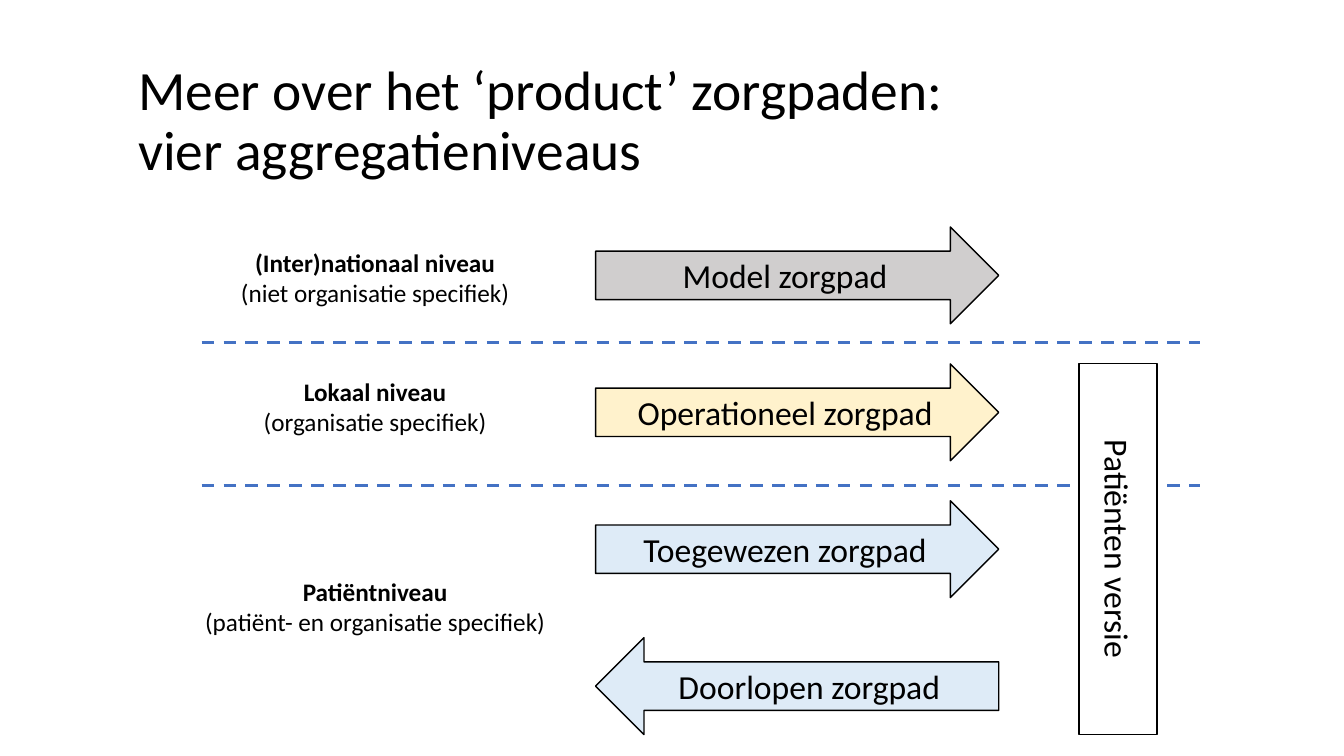
import pptx
import pptx.util
import pptx.dml.color
import pptx.enum.dml
import pptx.enum.shapes
import pptx.enum.text
import pptx.oxml.ns
import lxml.etree

Cm = pptx.util.Cm
Pt = pptx.util.Pt
RGBColor = pptx.dml.color.RGBColor
MSO_SHAPE = pptx.enum.shapes.MSO_SHAPE
PP_ALIGN = pptx.enum.text.PP_ALIGN
MSO_ANCHOR = pptx.enum.text.MSO_ANCHOR

BLACK = RGBColor(0x00, 0x00, 0x00)
WHITE = RGBColor(0xFF, 0xFF, 0xFF)
GREY = RGBColor(0xD0, 0xCE, 0xCE)
YELLOW = RGBColor(0xFF, 0xF2, 0xCC)
LIGHT_BLUE = RGBColor(0xDE, 0xEB, 0xF7)
BLUE = RGBColor(0x44, 0x72, 0xC4)


def format_text(para, size, align, bold=False):
    para.alignment = align
    for span in para.runs:
        span.font.name = "Calibri"
        span.font.size = Pt(size)
        span.font.bold = bold
        span.font.color.rgb = BLACK


def add_block(kind, left, top, width, height, fill, text):
    box = page.shapes.add_shape(kind, Cm(left), Cm(top), Cm(width), Cm(height))
    box.shadow.inherit = False
    box.fill.solid()
    box.fill.fore_color.rgb = fill
    box.line.color.rgb = BLACK
    box.line.width = Pt(1)
    box.text_frame.text = text
    box.text_frame.vertical_anchor = MSO_ANCHOR.MIDDLE
    format_text(box.text_frame.paragraphs[0], 24, PP_ALIGN.CENTER)
    return box


deck = pptx.Presentation()
deck.slide_width = Cm(33.87)
deck.slide_height = Cm(19.05)
page = deck.slides.add_slide(deck.slide_layouts[5])

title = page.shapes.title
title.left, title.top, title.width, title.height = Cm(3.23), Cm(2.54), Cm(25.93), Cm(1.09)
title.text_frame.text = "Meer over het ‘product’ zorgpaden: \vvier aggregatieniveaus"
title.text_frame.auto_size = pptx.enum.text.MSO_AUTO_SIZE.NONE
title.text_frame.vertical_anchor = MSO_ANCHOR.MIDDLE
title.text_frame.paragraphs[0].line_spacing = 0.9
format_text(title.text_frame.paragraphs[0], 39.6, PP_ALIGN.LEFT)

for height in (8.64, 12.24):
    divider = page.shapes.add_connector(
        pptx.enum.shapes.MSO_CONNECTOR.STRAIGHT, Cm(5.08), Cm(height), Cm(30.23), Cm(height))
    divider.line.color.rgb = BLUE
    divider.line.width = Pt(2.25)
    divider.line.dash_style = pptx.enum.dml.MSO_LINE.DASH
    lxml.etree.SubElement(divider._element.spPr, pptx.oxml.ns.qn("a:effectLst"))

pathways = [
    (MSO_SHAPE.RIGHT_ARROW, GREY, "Model zorgpad"),
    (MSO_SHAPE.RIGHT_ARROW, YELLOW, "Operationeel zorgpad"),
    (MSO_SHAPE.RIGHT_ARROW, LIGHT_BLUE, "Toegewezen zorgpad"),
    (MSO_SHAPE.LEFT_ARROW, LIGHT_BLUE, "Doorlopen zorgpad"),
]
for index, (kind, fill, text) in enumerate(pathways):
    add_block(kind, 15.01, 5.72 + 3.45 * index, 10.16, 2.44, fill, text)

patient_version = add_block(MSO_SHAPE.RECTANGLE, 23.5, 12.85, 9.35, 1.96, WHITE, "Patiënten versie")
patient_version.rotation = 90

levels = [
    (6.1, "(Inter)nationaal niveau", "(niet organisatie specifiek)"),
    (9.35, "Lokaal niveau", "(organisatie specifiek)"),
    (14.4, "Patiëntniveau", "(patiënt- en organisatie specifiek)"),
]
for top, name, scope in levels:
    label = page.shapes.add_textbox(Cm(4.72), Cm(top), Cm(9.47), Cm(1.8))
    label.text_frame.word_wrap = True
    label.text_frame.auto_size = pptx.enum.text.MSO_AUTO_SIZE.SHAPE_TO_FIT_TEXT
    label.text_frame.text = f"{name}\n{scope}"
    name_para, scope_para = label.text_frame.paragraphs
    format_text(name_para, 18, PP_ALIGN.CENTER, bold=True)
    format_text(scope_para, 18, PP_ALIGN.CENTER)

deck.save("out.pptx")
